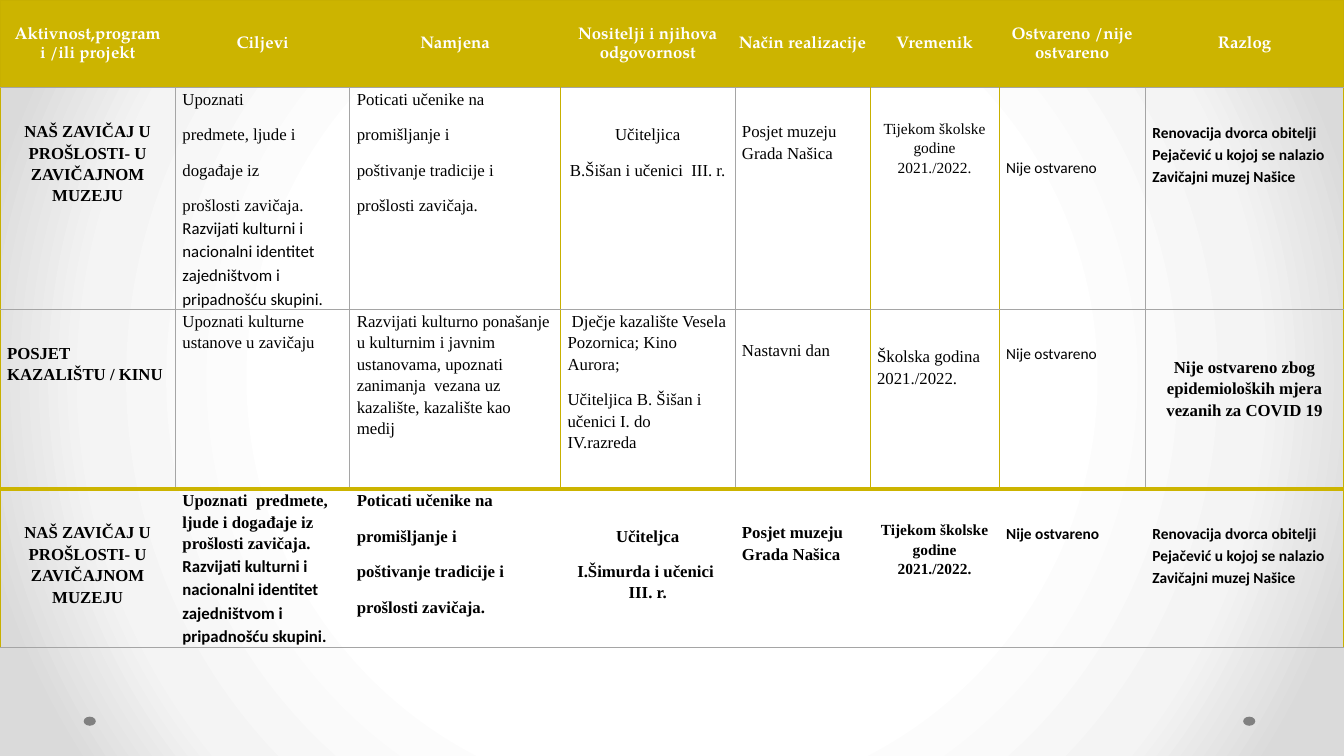
from dataclasses import dataclass

from pptx import Presentation
from pptx.dml.color import RGBColor
from pptx.enum.shapes import MSO_SHAPE as Shape
from pptx.enum.text import MSO_ANCHOR as Anchor, PP_ALIGN as Align
from pptx.oxml import parse_xml
from pptx.oxml.ns import nsdecls
from pptx.util import Inches, Pt

GOLD = RGBColor(0xC8, 0xB0, 0x00)
HEAD = RGBColor(0xCC, 0xB4, 0x00)
GRAY = RGBColor(0xA5, 0xA5, 0xA5)
DOT = RGBColor(0x80, 0x80, 0x80)
WHITE = RGBColor(0xFF, 0xFF, 0xFF)
BLACK = RGBColor(0x00, 0x00, 0x00)

SERIF, SANS, TITLE = "Times New Roman", "Calibri", "TeX Gyre Pagella"
WIDTHS = [1.74, 1.73, 2.09, 1.73, 1.34, 1.28, 1.45, 1.97]
HEIGHTS = [0.87, 1.04, 1.78, 1.21]
# Vertical rules, from the left edge to the right edge
RULES = [GOLD, GRAY, GRAY, GOLD, GRAY, GOLD, GOLD, GRAY, GOLD]
STOPS = [(50, "FFFFFF"), (76, "F4F4F4"), (92, "DADADA")]


@dataclass
class Entry:
    lines: list[str]
    gap: float = 0
    align: Align = Align.LEFT
    size: float = 12
    font: str = SERIF
    bold: bool = False
    color: RGBColor = BLACK
    tail: str = ""  # closing run in the sans font
    after: float = 10
    side: float = 0.07
    mid: bool = False
    foot: float = 0


@dataclass
class Rule:
    side: str
    color: RGBColor | None
    width: float = 0.75


# Texts used in more than one row
GOAL = "Razvijati kulturni i nacionalni identitet zajedništvom i pripadnošću skupini."
HOME = "NAŠ ZAVIČAJ U PROŠLOSTI- U ZAVIČAJNOM MUZEJU"
USE = ["Poticati učenike na", "promišljanje i", "poštivanje tradicije i", "prošlosti zavičaja."]
VISIT = "Posjet muzeju Grada Našica"
TIME = "Tijekom školske godine 2021./2022."
NOT = "Nije ostvareno"
WHY = "Renovacija dvorca obitelji Pejačević u kojoj se nalazio Zavičajni muzej Našice"
MID = Align.CENTER


def title(text: str) -> Entry:
    return Entry([text], align=MID, font=TITLE, bold=True, color=WHITE,
                 after=0, side=0.03, mid=True)


def museum(goal: list[str], staff: list[str], gap: float, bold: bool) -> list[Entry]:
    return [
        Entry([HOME], 0.32, MID, bold=True),
        Entry(goal, bold=bold, tail=GOAL),
        Entry(USE, bold=bold),
        Entry(staff, 0.35, MID, bold=bold),
        Entry([VISIT], 0.32, bold=bold),
        Entry([TIME], 0.3, MID, 11, bold=bold),
        Entry([NOT], gap, size=11, font=SANS, bold=bold),
        Entry([WHY], 0.33, size=11, font=SANS, bold=True),
    ]


ROWS = [
    [title(text) for text in (
        "Aktivnost,program i /ili projekt", "Ciljevi", "Namjena",
        "Nositelji i njihova odgovornost", "Način realizacije", "Vremenik",
        "Ostvareno /nije ostvareno", "Razlog")],
    museum(["Upoznati", "predmete, ljude i", "događaje iz", "prošlosti zavičaja. "],
           ["Učiteljica", "B.Šišan i učenici  III. r."], 0.68, False),
    [
        Entry(["POSJET KAZALIŠTU / KINU"], 0.32, bold=True),
        Entry(["Upoznati kulturne ustanove u zavičaju"]),
        Entry(["Razvijati kulturno ponašanje u kulturnim i javnim ustanovama, upoznati "
               "zanimanja  vezana uz kazalište, kazalište kao medij"]),
        Entry([" Dječje kazalište Vesela Pozornica; Kino Aurora;",
               "Učiteljica B. Šišan i učenici I. do  IV.razreda"]),
        Entry(["Nastavni dan"], 0.29),
        Entry(["Školska godina 2021./2022."], 0.35),
        Entry([NOT], 0.32, size=11, font=SANS),
        Entry(["Nije ostvareno zbog epidemioloških mjera vezanih za COVID 19"],
              align=MID, bold=True, after=0, side=0.04, mid=True, foot=0.23),
    ],
    museum(["Upoznati  predmete, ljude i događaje iz prošlosti zavičaja. "],
           ["Učiteljca", "I.Šimurda i učenici  III. r."], 0.33, True),
]


def paint(slide) -> None:
    stops = "".join(f'<a:gs pos="{at * 1000}"><a:srgbClr val="{tone}"/></a:gs>'
                    for at, tone in STOPS)
    slide.element.cSld.insert(0, parse_xml(
        f'<p:bg {nsdecls("p", "a")}><p:bgPr><a:gradFill><a:gsLst>{stops}</a:gsLst>'
        '<a:path path="circle"><a:fillToRect l="50000" t="50000" r="50000" b="50000"/>'
        '</a:path></a:gradFill><a:effectLst/></p:bgPr></p:bg>'))


def add_dot(slide, left: float) -> None:
    dot = slide.shapes.add_shape(Shape.OVAL, Inches(left), Inches(7.11),
                                 Inches(0.12), Inches(0.09))
    dot.shadow.inherit = False
    dot.fill.solid()
    dot.fill.fore_color.rgb = DOT
    dot.line.fill.background()


def add_run(para, text: str, entry: Entry, face: str) -> None:
    run = para.add_run()
    run.text = text
    font = run.font
    font.name, font.size, font.bold = face, Pt(entry.size), entry.bold
    font.color.rgb = entry.color


def write(cell, entry: Entry) -> None:
    cell.margin_left = cell.margin_right = Inches(entry.side)
    cell.margin_top, cell.margin_bottom = Inches(entry.gap), Inches(entry.foot)
    cell.vertical_anchor = Anchor.MIDDLE if entry.mid else Anchor.TOP
    frame = cell.text_frame
    for i, line in enumerate(entry.lines):
        para = frame.add_paragraph() if i else frame.paragraphs[0]
        para.alignment, para.line_spacing = entry.align, 1.15
        para.space_after = Pt(entry.after)
        add_run(para, line, entry, entry.font)
    if entry.tail:
        add_run(para, entry.tail, entry, SANS)


def edge(cell, rule: Rule) -> None:
    fill = (f'<a:solidFill><a:srgbClr val="{rule.color}"/></a:solidFill>'
            if rule.color else "<a:noFill/>")
    cell._tc.get_or_add_tcPr().append(parse_xml(
        f'<a:ln{rule.side} {nsdecls("a")} w="{Pt(rule.width)}">{fill}</a:ln{rule.side}>'))


def frame_cell(cell, row: int, col: int) -> None:
    last = len(WIDTHS) - 1
    inner = row in (1, 2)
    level = [Rule("T", GOLD), Rule("T", GRAY), Rule("T", GRAY),
             Rule("T", HEAD, 4), Rule("T", GRAY)]
    below = level[row + 1]
    edge(cell, Rule("L", RULES[col] if inner or col == 0 else None))
    edge(cell, Rule("R", RULES[col + 1] if inner or col == last else None))
    edge(cell, level[row])
    edge(cell, Rule("B", below.color, below.width))
    if row == 0:
        cell.fill.solid()
        cell.fill.fore_color.rgb = HEAD
    else:
        cell.fill.background()


def add_grid(slide) -> None:
    grid = slide.shapes.add_table(len(ROWS), len(WIDTHS), 0, 0,
                                  Inches(13.33), Inches(6.52)).table
    grid.first_row = grid.horz_banding = False
    for col, width in zip(grid.columns, WIDTHS):
        col.width = Inches(width)
    for row, height in zip(grid.rows, HEIGHTS):
        row.height = Inches(height)
    for r, entries in enumerate(ROWS):
        for c, entry in enumerate(entries):
            cell = grid.cell(r, c)
            write(cell, entry)
            frame_cell(cell, r, c)


def main() -> None:
    deck = Presentation()
    deck.slide_width, deck.slide_height = Inches(13.33), Inches(7.5)
    slide = deck.slides.add_slide(deck.slide_layouts[6])
    paint(slide)
    for left in (12.33, 0.83):
        add_dot(slide, left)
    add_grid(slide)
    deck.save("out.pptx")


if __name__ == "__main__":
    main()
